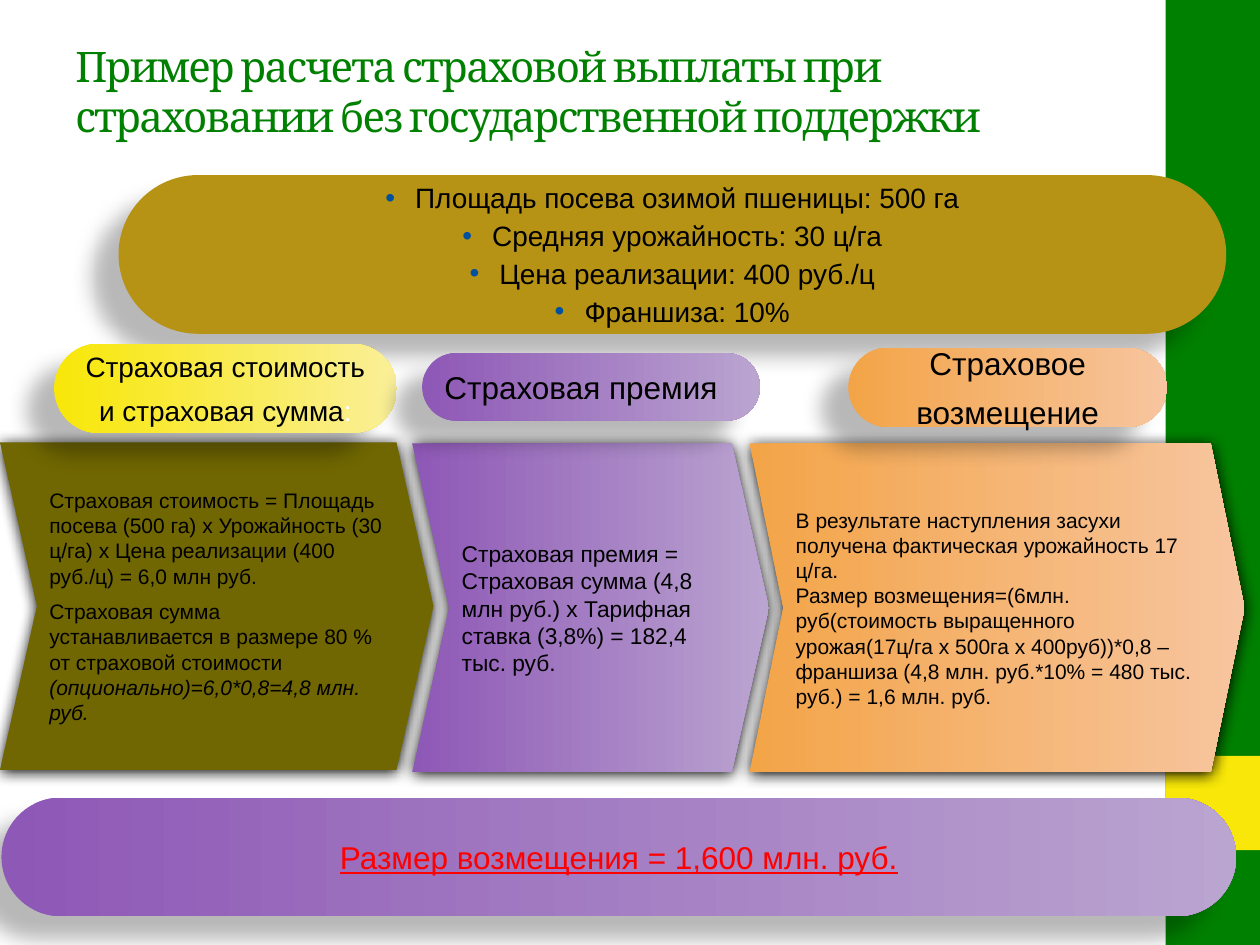
from dataclasses import dataclass

from lxml.etree import SubElement
from pptx import Presentation
from pptx.dml.color import RGBColor
from pptx.enum.shapes import MSO_SHAPE as Preset
from pptx.enum.text import MSO_ANCHOR as Anchor, PP_ALIGN as Align
from pptx.oxml.ns import qn
from pptx.util import Cm, Pt

BLACK, WHITE, RED = "000000", "FFFFFF", "FF0000"
GREEN, YELLOW, BLUE = "008000", "F8E708", "0050A0"
YELLOWS = (YELLOW, "FAEF98")
PURPLES = ("8E58B6", "BAA4D0")
ORANGES = ("F3A447", "F7C59F")


@dataclass(frozen=True)
class Shadow:
    opacity: int
    blur: float
    distance: float
    direction: int


@dataclass(frozen=True)
class Style:
    preset: Preset
    shadow: Shadow
    wrap: bool


@dataclass(frozen=True)
class Run:
    text: str
    italic: bool = False
    color: str = ""


@dataclass(frozen=True)
class Line:
    runs: tuple[Run, ...]
    before: float = 0


@dataclass(frozen=True)
class Panel:
    style: Style
    box: tuple[float, float, float, float]
    adjustment: float
    colors: tuple[str, ...]
    lines: tuple[Line, ...]
    size: int
    align: Align = Align.LEFT
    color: str = BLACK
    bulleted: bool = False
    underlined: bool = False


def line(text: str, before: float = 0) -> Line:
    return Line((Run(text),), before)


PILL = Style(Preset.ROUNDED_RECTANGLE, Shadow(28, 11.8, 19.7, 141), False)
ARROW = Style(Preset.CHEVRON, Shadow(100, 8.5, 1, 90), True)

CONDITIONS = Panel(
    PILL, (2.39, 3.53, 22.33, 3.2), 0.5, ("B79315",),
    tuple(line(text, 2.5) for text in (
        "Площадь посева озимой пшеницы: 500 га",
        "Средняя урожайность: 30 ц/га",
        "Цена реализации: 400 руб./ц",
        "Франшиза: 10%",
    )), 16, Align.CENTER, bulleted=True)

STEPS = (
    Panel(ARROW, (15.11, 8.94, 9.98, 6.63), 0.103, ORANGES, (
        line("В результате наступления засухи получена фактическая урожайность 17 ц/га.", 2.5),
        line("Размер возмещения=(6млн. руб(стоимость выращенного урожая(17ц/га х 500га х "
             "400руб))*0,8 – франшиза (4,8 млн. руб.*10% = 480 тыс. руб.) = 1,6 млн. руб."),
    ), 12),
    Panel(ARROW, (8.31, 8.94, 7.19, 6.63), 0.113, PURPLES, (
        line("Страховая премия = Страховая сумма (4,8 млн руб.) х Тарифная ставка (3,8%) "
             "= 182,4 тыс. руб.", 6),
    ), 13),
    Panel(ARROW, (0, 8.92, 8.74, 6.6), 0.113, ("706702",), (
        line("Страховая стоимость = Площадь посева (500 га) х Урожайность (30 ц/га) х "
             "Цена реализации (400 руб./ц) = 6,0 млн руб.", 2.5),
        Line((Run("Страховая сумма устанавливается в размере 80 % от страховой стоимости "),
              Run("(опционально)=6,0*0,8=4,8 млн. руб.", italic=True)), 6),
    ), 12),
)

HEADINGS = (
    Panel(PILL, (1.09, 6.93, 6.91, 1.8), 0.5, YELLOWS, (
        line("Страховая стоимость", 6),
        Line((Run("и страховая сумма"), Run(":", color=WHITE)), 6),
    ), 16, Align.CENTER),
    Panel(PILL, (8.51, 7.12, 6.81, 1.36), 0.5, PURPLES,
          (line("Страховая премия", 6),), 18),
    Panel(PILL, (17.1, 7.01, 6.43, 1.6), 0.5, ORANGES,
          (line("Страховое", 6), line("возмещение", 6)), 18, Align.CENTER),
)

RESULT = Panel(PILL, (0.03, 16.08, 24.89, 2.39), 0.5, PURPLES,
               (line("Размер возмещения = 1,600 млн. руб."),), 18,
               Align.CENTER, RED, underlined=True)


def rgb(color: str) -> RGBColor:
    return RGBColor.from_string(color)


def add_filled_shape(slide, preset: Preset, box: tuple[float, ...], colors: tuple[str, ...]):
    shape = slide.shapes.add_shape(preset, *map(Cm, box))
    shape.shadow.inherit = False
    shape.line.fill.background()
    if len(colors) == 1:
        shape.fill.solid()
        shape.fill.fore_color.rgb = rgb(colors[0])
    else:
        shape.fill.gradient()
        shape.fill.gradient_angle = 0
        for stop, color in zip(shape.fill.gradient_stops, colors):
            stop.color.rgb = rgb(color)
    return shape


def add_shadow(shape, shadow: Shadow) -> None:
    effects = shape._element.spPr.find(qn("a:effectLst"))
    outer = SubElement(effects, qn("a:outerShdw"), blurRad=str(Pt(shadow.blur)),
                       dist=str(Pt(shadow.distance)), dir=str(shadow.direction * 60000),
                       algn="ctr", rotWithShape="0")
    color = SubElement(outer, qn("a:srgbClr"), val=BLACK)
    SubElement(color, qn("a:alpha"), val=str(shadow.opacity * 1000))


def add_bullet(paragraph) -> None:
    properties = paragraph._p.get_or_add_pPr()
    properties.set("marL", str(Cm(0.6)))
    properties.set("indent", str(-Cm(0.6)))
    bullet_color = SubElement(properties, qn("a:buClr"))
    SubElement(bullet_color, qn("a:srgbClr"), val=BLUE)
    SubElement(properties, qn("a:buFont"), typeface="Arial")
    SubElement(properties, qn("a:buChar"), char="•")


def set_font(font, name: str, size: int, color: str) -> None:
    font.name = name
    font.size = Pt(size)
    font.color.rgb = rgb(color)


def add_panel(slide, panel: Panel) -> None:
    shape = add_filled_shape(slide, panel.style.preset, panel.box, panel.colors)
    shape.adjustments[0] = panel.adjustment
    add_shadow(shape, panel.style.shadow)
    frame = shape.text_frame
    frame.word_wrap = panel.style.wrap
    frame.vertical_anchor = Anchor.MIDDLE
    for index, content in enumerate(panel.lines):
        paragraph = frame.add_paragraph() if index else frame.paragraphs[0]
        paragraph.alignment = panel.align
        paragraph.space_before = Pt(content.before)
        if panel.bulleted:
            add_bullet(paragraph)
        set_font(paragraph.font, "Arial", panel.size, panel.color)
        if panel.underlined:
            paragraph.font.underline = True
        for part in content.runs:
            run = paragraph.add_run()
            run.text = part.text
            if part.italic:
                run.font.italic = True
            if part.color:
                run.font.color.rgb = rgb(part.color)


def add_title(slide, text: str) -> None:
    frame = slide.shapes.add_textbox(Cm(1.27), Cm(0.76), Cm(21.16), Cm(3.18)).text_frame
    frame.word_wrap = True
    frame.margin_top = Cm(0.05)
    paragraph = frame.paragraphs[0]
    set_font(paragraph.font, "Cambria", 24, GREEN)
    run = paragraph.add_run()
    run.text = text
    run.font._element.set("spc", "-100")


def main() -> None:
    presentation = Presentation()
    presentation.slide_width, presentation.slide_height = Cm(25.4), Cm(19.05)
    slide = presentation.slides.add_slide(presentation.slide_layouts[6])
    add_filled_shape(slide, Preset.RECTANGLE, (23.5, 0, 1.9, 19.05), (GREEN,))
    add_filled_shape(slide, Preset.RECTANGLE, (23.5, 15.24, 1.9, 1.9), (YELLOW,))
    add_panel(slide, CONDITIONS)
    add_title(slide, "Пример расчета страховой выплаты при страховании "
                     "без государственной поддержки")
    for panel in (*STEPS, *HEADINGS, RESULT):
        add_panel(slide, panel)
    presentation.save("out.pptx")


if __name__ == "__main__":
    main()
